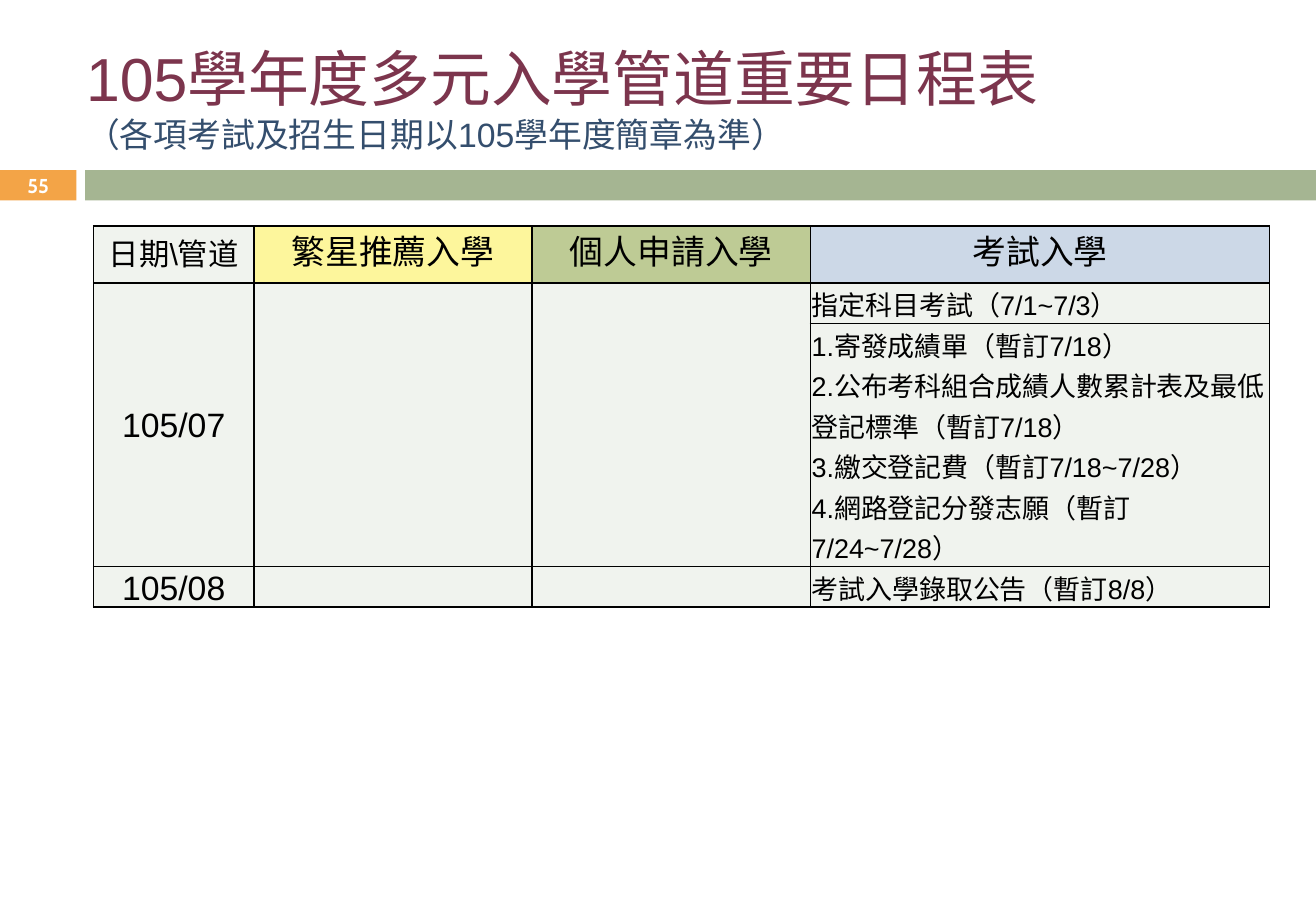
"""Build the slide of key admission dates for school year 105."""
import pptx
import pptx.dml.color
import pptx.enum.shapes
import pptx.enum.text
import pptx.oxml
import pptx.oxml.ns
import pptx.util

WIDE, HIGH = 10.83, 7.5
PALE, BLACK, WHITE = "F0F3EE", "000000", "FFFFFF"
TITLE = [
    ("105學年度多元入學管道重要日程表", 36, "7C354D"),
    ("（各項考試及招生日期以105學年度簡章為準）", 20, "344E6D"),
]
PAGE = "55"
HEADS = [
    ("日期\\管道", 18, PALE),
    ("繁星推薦入學", 20, "FDF69C"),
    ("個人申請入學", 20, "BECB95"),
    ("考試入學", 20, "CCD8E7"),
]
DATES = {1: "105/07", 3: "105/08"}
EXAMS = [
    ["指定科目考試（7/1~7/3）"],
    [
        "1.寄發成績單（暫訂7/18）",
        "2.公布考科組合成績人數累計表及最低登記標準（暫訂7/18）",
        "3.繳交登記費（暫訂7/18~7/28）",
        "4.網路登記分發志願（暫訂7/24~7/28）",
    ],
    ["考試入學錄取公告（暫訂8/8）"],
]
COLS = [1.32, 2.29, 2.29, 3.78]
LINE = 24 / 72
ROWS = [0.47, LINE, 6 * LINE, LINE]
BARS = [(0, 0.63, "F3A447"), (0.7, WIDE - 0.7, "A5B592")]
BAR_TOP, BAR_HIGH = 1.4, 0.25

ALIGN = pptx.enum.text.PP_ALIGN
MIDDLE = pptx.enum.text.MSO_ANCHOR.MIDDLE


def inch(*sizes):
    return [pptx.util.Inches(size) for size in sizes]


def tint(code):
    return pptx.dml.color.RGBColor.from_string(code)


def paint(part, code):
    part.fill.solid()
    part.fill.fore_color.rgb = tint(code)


def write(frame, text, size=20, color=BLACK, font="Arial", bold=False,
          align=ALIGN.LEFT, space=None, more=False):
    para = frame.add_paragraph() if more else frame.paragraphs[0]
    para.alignment = align
    if space:
        para.line_spacing = pptx.util.Pt(space)
    run = para.add_run()
    run.text = text
    run.font.size = pptx.util.Pt(size)
    run.font.name = font
    run.font.bold = bold
    run.font.color.rgb = tint(color)


def frame_cell(cell):
    props = cell._tc.get_or_add_tcPr()
    space = pptx.oxml.ns.nsdecls("a")
    for spot, side in enumerate(("lnL", "lnR", "lnT", "lnB")):
        props.insert(spot, pptx.oxml.parse_xml(
            f'<a:{side} {space} w="12700"><a:solidFill>'
            f'<a:srgbClr val="{BLACK}"/></a:solidFill></a:{side}>'))


def add_text(slide, *place):
    frame = slide.shapes.add_textbox(*inch(*place)).text_frame
    frame.word_wrap = True
    return frame


def add_bars(slide):
    kind = pptx.enum.shapes.MSO_SHAPE.RECTANGLE
    for left, width, color in BARS:
        bar = slide.shapes.add_shape(
            kind, *inch(left, BAR_TOP, width, BAR_HIGH))
        bar.shadow.inherit = False
        paint(bar, color)
        bar.line.fill.background()


def add_dates(slide):
    table = slide.shapes.add_table(
        len(ROWS), len(COLS),
        *inch(0.77, 1.86, sum(COLS), sum(ROWS))).table
    table.first_row = table.horz_banding = False
    for col, width in zip(table.columns, inch(*COLS)):
        col.width = width
    for row, height in zip(table.rows, inch(*ROWS)):
        row.height = height
    for cell in table.iter_cells():
        paint(cell, PALE)
        frame_cell(cell)
        cell.vertical_anchor = MIDDLE
        cell.margin_left, cell.margin_right = inch(0.01, 0.01)
        cell.margin_top = cell.margin_bottom = 0
    for col in range(3):
        table.cell(1, col).merge(table.cell(2, col))
    for col, (text, size, color) in enumerate(HEADS):
        cell = table.cell(0, col)
        paint(cell, color)
        write(cell.text_frame, text, size=size, align=ALIGN.CENTER, space=24)
    for row, text in DATES.items():
        write(table.cell(row, 0).text_frame, text,
              align=ALIGN.CENTER, space=24)
    for row, lines in enumerate(EXAMS, 1):
        frame = table.cell(row, 3).text_frame
        for spot, text in enumerate(lines):
            write(frame, text, size=16, space=24, more=spot > 0)


def main():
    deck = pptx.Presentation()
    deck.slide_width, deck.slide_height = inch(WIDE, HIGH)
    slide = deck.slides.add_slide(deck.slide_layouts[6])
    add_bars(slide)
    add_dates(slide)
    title = add_text(slide, 0.61, 0.29, 9.76, 1.34)
    for spot, (text, size, color) in enumerate(TITLE):
        write(title, text, size=size, color=color, more=spot > 0)
    page = add_text(slide, 0, BAR_TOP - 0.01, BARS[0][1], 0.27)
    page.vertical_anchor = MIDDLE
    write(page, PAGE, size=11.9, color=WHITE, font="Cabin", bold=True,
          align=ALIGN.CENTER)
    deck.save("out.pptx")


if __name__ == "__main__":
    main()
